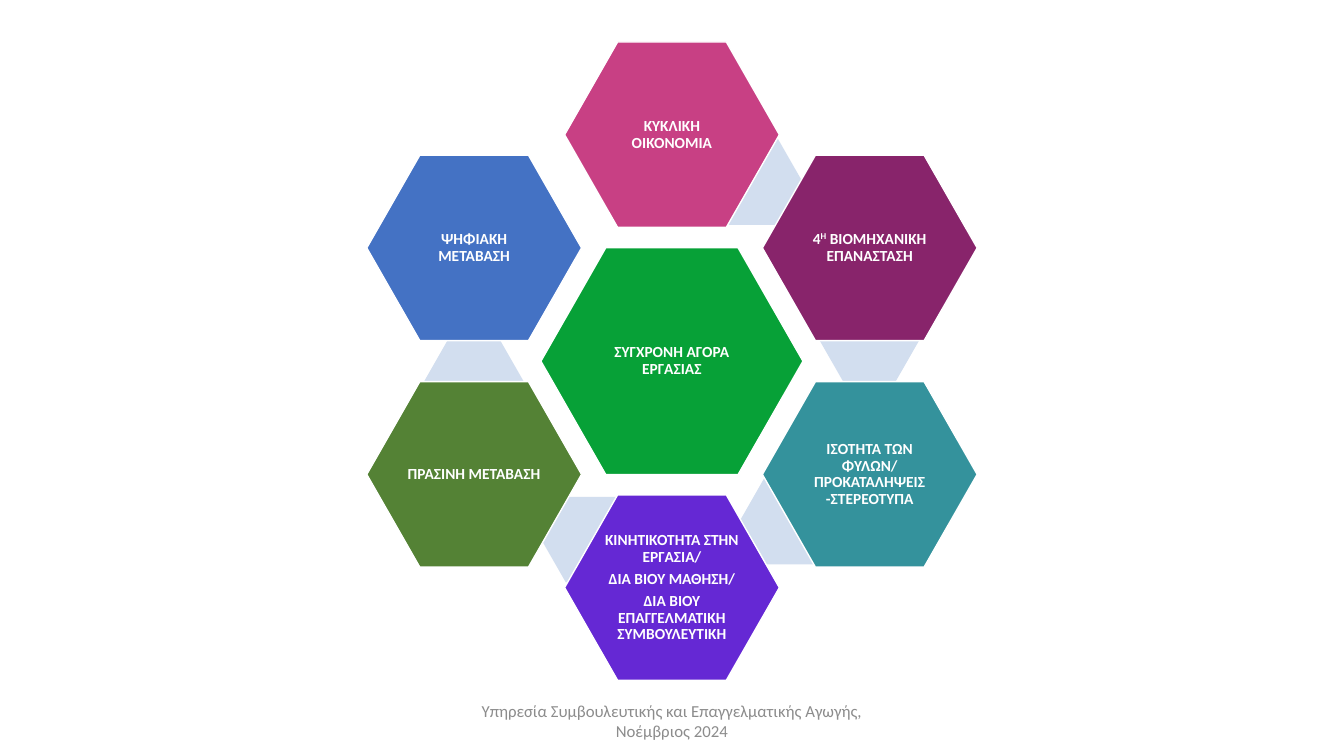
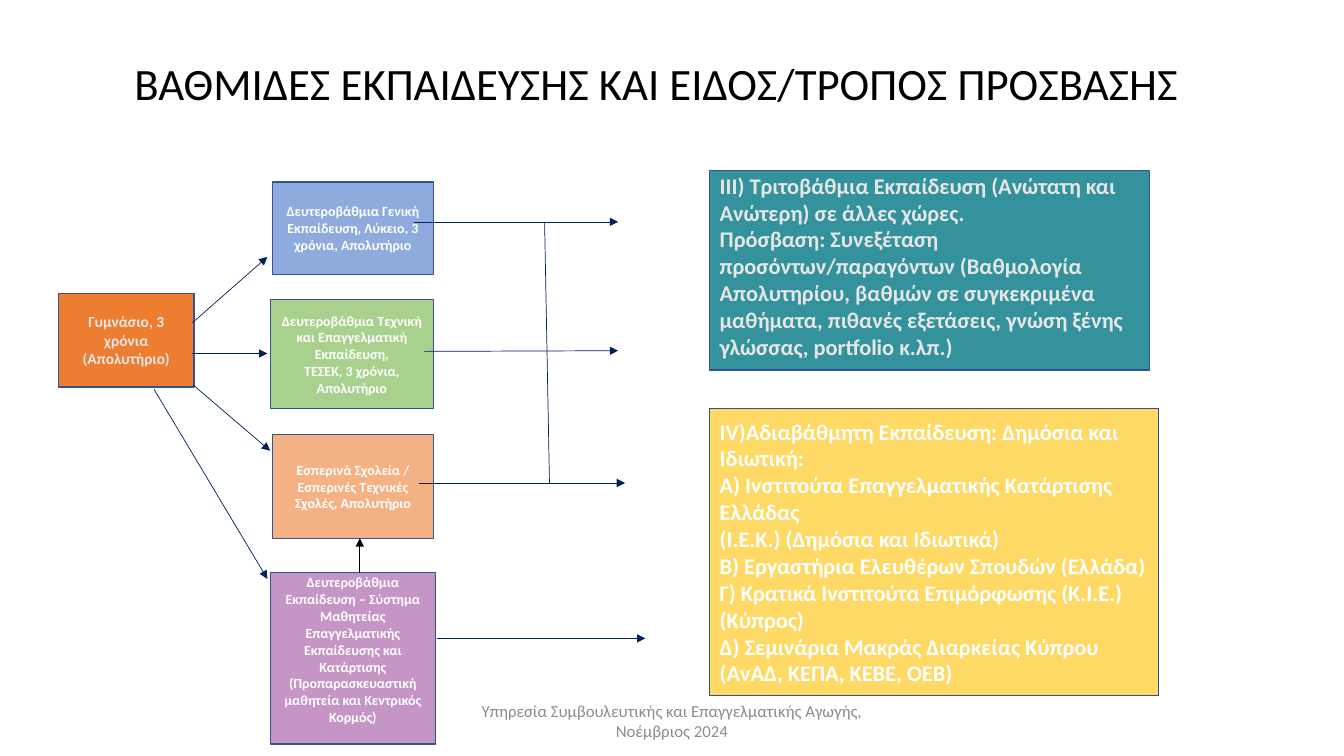
from pptx import Presentation
from pptx.dml.color import RGBColor
from pptx.enum.shapes import MSO_CONNECTOR, MSO_SHAPE
from pptx.enum.text import MSO_ANCHOR, PP_ALIGN
from pptx.oxml.ns import qn
from pptx.util import Pt
from lxml.etree import SubElement

FONT = "Calibri"
COLORS = {
    "white": "FFFFFF", "black": "000000", "light": "E7E6E6", "footer": "8C8C8C",
    "border": "325491", "arrow": "002060", "pale": "D2DEEF",
    "green": "07A137", "pink": "C84084", "plum": "88246B", "teal": "34929C",
    "violet": "6528D4", "olive": "548235", "blue": "4472C4",
    "orange": "ED7D31", "sky": "8FAADC", "lime": "A9D18E", "peach": "F4B183",
    "lilac": "C495C5", "yellow": "FFD966",
}
FOOTER = "Υπηρεσία Συμβουλευτικής και Επαγγελματικής Αγωγής, Νοέμβριος 2024"

OUTER_SIZE = (153.4, 132.5)
CENTER_SIZE = (187.2, 162)
LINK_SIZE = (70.6, 61.2)
SUPERSCRIPT = "30000"

# Across and down are steps from the ring's middle; link is the pale hexagon's offset.
TRENDS = [
    {"step": (0, -1), "color": "pink", "link": (58, -128),
     "lines": ["ΚΥΚΛΙΚΗ ΟΙΚΟΝΟΜΙΑ"]},
    {"step": (1, -0.5), "color": "plum", "link": (141, -14.4),
     "lines": [["4", ("Η", SUPERSCRIPT), " ΒΙΟΜΗΧΑΝΙΚΗ ΕΠΑΝΑΣΤΑΣΗ"]]},
    {"step": (1, 0.5), "color": "teal", "link": (83.5, 114.5),
     "lines": ["ΙΣΟΤΗΤΑ ΤΩΝ ΦΥΛΩΝ/ ΠΡΟΚΑΤΑΛΗΨΕΙΣ -ΣΤΕΡΕΟΤΥΠΑ"]},
    {"step": (0, 1), "color": "violet", "link": (-58, 127.5),
     "lines": ["ΚΙΝΗΤΙΚΟΤΗΤΑ ΣΤΗΝ ΕΡΓΑΣΙΑ/", "ΔΙΑ ΒΙΟΥ ΜΑΘΗΣΗ/",
               "ΔΙΑ ΒΙΟΥ ΕΠΑΓΓΕΛΜΑΤΙΚΗ ΣΥΜΒΟΥΛΕΥΤΙΚΗ"]},
    {"step": (-1, 0.5), "color": "olive", "link": (-141.5, 14),
     "lines": ["ΠΡΑΣΙΝΗ ΜΕΤΑΒΑΣΗ"]},
    {"step": (-1, -0.5), "color": "blue", "link": None,
     "lines": ["ΨΗΦΙΑΚΗ ΜΕΤΑΒΑΣΗ"]},
]

# Box within the school region, fill, text colour, text size, anchor at top, paragraphs.
SCHOOLS = [
    ((0, 79.5, 96.5, 67), "orange", "light", 11, False,
     ["Γυμνάσιο, 3 χρόνια (Απολυτήριο)"]),
    ((152.5, 0, 115.2, 66), "sky", "white", 10, False,
     ["Δευτεροβάθμια Γενική Εκπαίδευση, Λύκειο, 3 χρόνια, Απολυτήριο"]),
    ((151, 84, 116.6, 77.8), "lime", "white", 10, False,
     ["Δευτεροβάθμια Τεχνική και Επαγγελματική", "Εκπαίδευση,",
      "ΤΕΣΕΚ, 3 χρόνια, Απολυτήριο"]),
    ((152.5, 180.5, 115.2, 74), "peach", "white", 10, False,
     ["Εσπερινά Σχολεία / Εσπερινές Τεχνικές Σχολές, Απολυτήριο"]),
    ((151, 279, 118, 122.4), "lilac", "white", 10, True,
     ["Δευτεροβάθμια Εκπαίδευση – Σύστημα Μαθητείας Επαγγελματικής "
      "Εκπαίδευσης και Κατάρτισης (Προπαρασκευαστική μαθητεία και "
      "Κεντρικός Κορμός)"]),
]

SCHOOL_ARROWS = [
    (95.5, 100.5, 149, 53.5),
    (95.5, 122.5, 149, 122.5),
    (96, 145, 151, 192),
    (68, 148, 149, 283.5),
    (254, 28.5, 399.5, 28.5),
    (261, 121, 399.5, 120.5),
    (257, 215, 404.5, 215),
    (270.5, 326, 419, 326),
]
JOINING_BAR = (347, 28.5, 350.5, 215)
APPRENTICE_ARROW = (215, 279, 215, 254.5)

TERTIARY = [
    "III) Τριτοβάθμια Εκπαίδευση (Ανώτατη και Ανώτερη) σε άλλες χώρες.",
    "Πρόσβαση: Συνεξέταση προσόντων/παραγόντων (Βαθμολογία Απολυτηρίου, "
    "βαθμών σε συγκεκριμένα μαθήματα, πιθανές εξετάσεις, γνώση ξένης "
    "γλώσσας, portfolio κ.λπ.)",
]
UNGRADED = [
    "IV)Αδιαβάθμητη Εκπαίδευση: Δημόσια και Ιδιωτική:",
    "Α) Ινστιτούτα Επαγγελματικής Κατάρτισης Ελλάδας",
    "(Ι.Ε.Κ.) (Δημόσια και Ιδιωτικά)",
    "Β) Εργαστήρια Ελευθέρων Σπουδών (Ελλάδα)",
    "Γ) Κρατικά Ινστιτούτα Επιμόρφωσης (Κ.Ι.Ε.) (Κύπρος)",
    "Δ) Σεμινάρια Μακράς Διαρκείας Κύπρου (ΑνΑΔ, ΚΕΠΑ, ΚΕΒΕ, ΟΕΒ)",
]


def rgb(name):
    return RGBColor.from_string(COLORS[name])


def write_text(shape, lines, size, color, bold=False, align=PP_ALIGN.CENTER,
               spacing=None, after=None):
    """Write each line as a paragraph; a line is a string or a list of runs."""
    frame = shape.text_frame
    frame.word_wrap = True
    frame.vertical_anchor = MSO_ANCHOR.MIDDLE
    for index, line in enumerate(lines):
        para = frame.add_paragraph() if index else frame.paragraphs[0]
        para.alignment = align
        if spacing:
            para.line_spacing = spacing
        if after:
            para.space_after = Pt(after)
        for part in [line] if isinstance(line, str) else line:
            words, baseline = (part, None) if isinstance(part, str) else part
            span = para.add_run()
            span.text = words
            span.font.name = FONT
            span.font.size = Pt(size)
            span.font.bold = bold
            span.font.color.rgb = rgb(color)
            if baseline:
                span.font._element.set("baseline", baseline)
    return frame


def add_filled(page, kind, box, fill, line=None):
    shape = page.shapes.add_shape(kind, *map(Pt, box))
    shape.shadow.inherit = False
    shape.fill.solid()
    shape.fill.fore_color.rgb = rgb(fill)
    if line:
        shape.line.color.rgb = rgb(line)
        shape.line.width = Pt(1)
    else:
        shape.line.fill.background()
    return shape


def add_hexagon(page, middle, size, fill, lines=None):
    """Centre a hexagon on a point; without lines it is a plain pale link."""
    box = (middle[0] - size[0] / 2, middle[1] - size[1] / 2, *size)
    shape = add_filled(page, MSO_SHAPE.HEXAGON, box, fill, "white" if lines else None)
    shape.adjustments[0] = 0.286
    if lines:
        frame = write_text(shape, lines, 11, "white", True, spacing=0.9, after=4)
        frame.margin_left = frame.margin_right = Pt(1.4)
        frame.margin_top = frame.margin_bottom = Pt(1.4)


def add_panel(page, box, fill, color, size, top, lines, align=PP_ALIGN.CENTER):
    panel = add_filled(page, MSO_SHAPE.RECTANGLE, box, fill, "border")
    frame = write_text(panel, lines, size, color, True, align)
    if top:
        frame.vertical_anchor = MSO_ANCHOR.TOP
        frame.margin_top = Pt(1)


def add_line(page, origin, ends, color="arrow", arrow=True):
    left, top = origin
    x1, y1, x2, y2 = ends
    line = page.shapes.add_connector(
        MSO_CONNECTOR.STRAIGHT,
        Pt(left + x1), Pt(top + y1), Pt(left + x2), Pt(top + y2))
    line.line.color.rgb = rgb(color)
    line.line.width = Pt(0.5)
    if arrow:
        SubElement(line.line._get_or_add_ln(), qn("a:tailEnd"), type="triangle")
    SubElement(line._element.spPr, qn("a:effectLst"))


def add_title(page, words):
    title = page.shapes.title
    title.left, title.top, title.width, title.height = map(Pt, (66, 29, 806.4, 65))
    write_text(title, [words], 32, "black", spacing=0.9)


def add_footer(page):
    box = page.shapes.add_textbox(*map(Pt, (318, 500.4, 324, 28.8)))
    write_text(box, [FOOTER], 12, "footer")


def add_trend_ring(page, left, top, width, height):
    middle_x, middle_y = left + width / 2, top + height / 2
    reach_x = (width - OUTER_SIZE[0]) / 2
    reach_y = (height - OUTER_SIZE[1]) / 2
    add_hexagon(page, (middle_x, middle_y), CENTER_SIZE, "green",
                ["ΣΥΓΧΡΟΝΗ ΑΓΟΡΑ ΕΡΓΑΣΙΑΣ"])
    for trend in TRENDS:
        if trend["link"]:
            across, down = trend["link"]
            add_hexagon(page, (middle_x + across, middle_y + down), LINK_SIZE, "pale")
        across, down = trend["step"]
        add_hexagon(page, (middle_x + across * reach_x, middle_y + down * reach_y),
                    OUTER_SIZE, trend["color"], trend["lines"])


def add_school_flow(page, left, top):
    for (x, y, width, height), *style in SCHOOLS:
        add_panel(page, (left + x, top + y, width, height), *style)
    for ends in SCHOOL_ARROWS:
        add_line(page, (left, top), ends)
    add_line(page, (left, top), JOINING_BAR, arrow=False)
    add_line(page, (left, top), APPRENTICE_ARROW, "black")


def add_access_panels(page, left, top):
    add_panel(page, (left, top + 170, 320.4, 205.2), "yellow", "white", 16, False,
              UNGRADED, PP_ALIGN.LEFT)
    add_panel(page, (left, top, 314, 142.6), "teal", "light", 16, True,
              TERTIARY, PP_ALIGN.LEFT)


def add_trends_slide(deck):
    page = deck.slides.add_slide(deck.slide_layouts[6])
    add_trend_ring(page, 262, 30, 436, 456)
    add_footer(page)


def add_levels_slide(deck):
    page = deck.slides.add_slide(deck.slide_layouts[5])
    add_title(page, "ΒΑΘΜΙΔΕΣ ΕΚΠΑΙΔΕΥΣΗΣ ΚΑΙ ΕΙΔΟΣ/ΤΡΟΠΟΣ ΠΡΟΣΒΑΣΗΣ")
    add_school_flow(page, 42, 130)
    add_access_panels(page, 507, 121.7)
    add_footer(page)


def main():
    deck = Presentation()
    deck.slide_width, deck.slide_height = Pt(960), Pt(540)
    add_trends_slide(deck)
    add_levels_slide(deck)
    deck.save("out.pptx")


if __name__ == "__main__":
    main()
